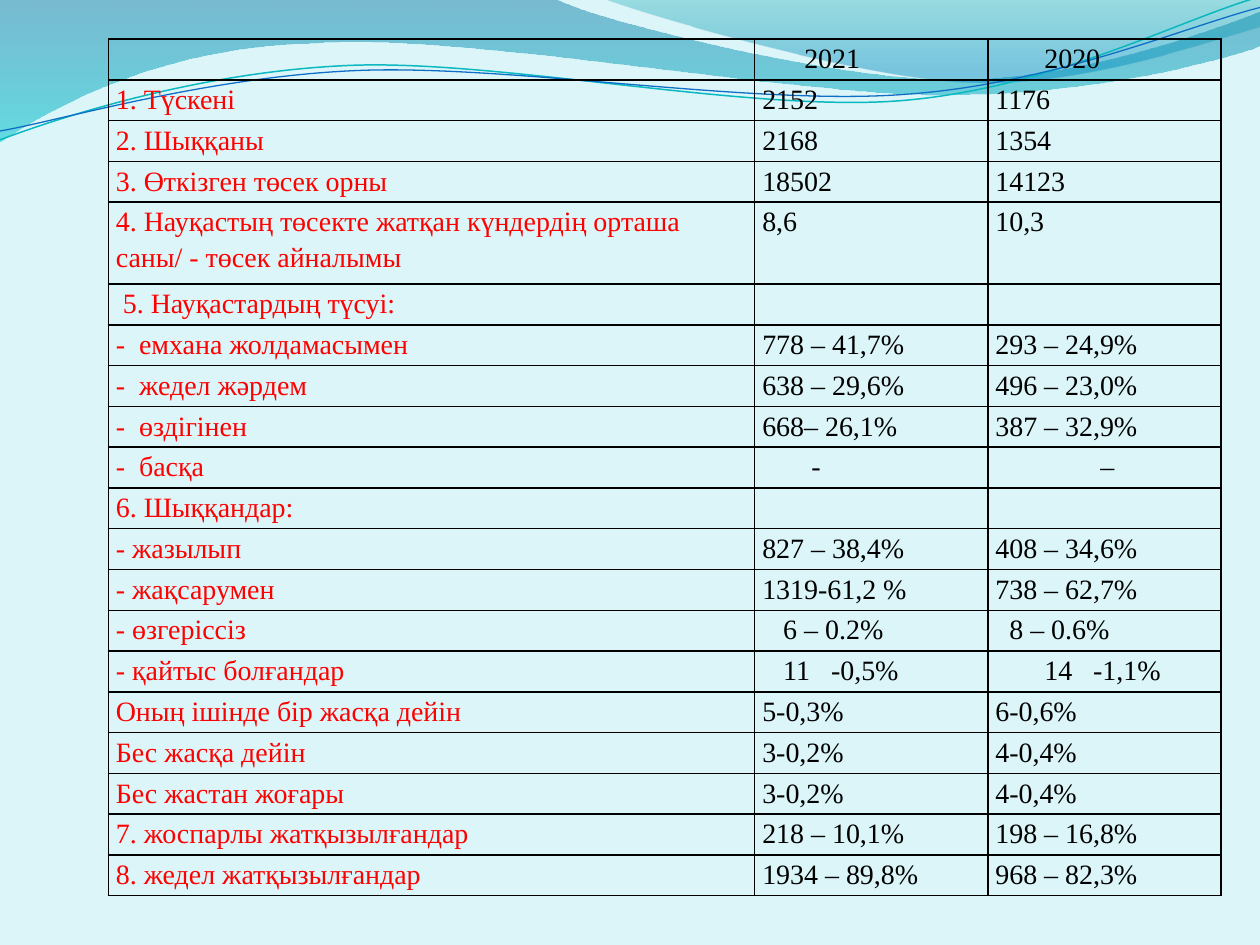
import math

import pptx
import pptx.dml.color
import pptx.enum.text
import pptx.oxml
import pptx.util
from pptx.oxml.ns import nsdecls, qn

inch = pptx.util.Inches
rgb = pptx.dml.color.RGBColor.from_string

THEME = dict(font="Times New Roman", size=16, background="DBF5F9",
             label="FF0000", value="000000", border="000000")

deck = pptx.Presentation()
deck.slide_width, deck.slide_height = inch(10), inch(7.5)
page = deck.slides.add_slide(deck.slide_layouts[6])
page.background.fill.solid()
page.background.fill.fore_color.rgb = rgb(THEME["background"])


def add_curve(start, segments, close):
    """Draw a smooth outline in inches; two numbers are a line, six a cubic Bézier."""
    units = 1000
    points = [(x * units, y * units) for segment in [start, *segments]
              for x, y in zip(segment[::2], segment[1::2])]
    builder = page.shapes.build_freeform(*points[0], scale=inch(1) / units)
    builder.add_line_segments(points[1:], close=close)
    curve = builder.convert_to_shape()
    curve.shadow.inherit = False
    lines = iter(list(curve._element.iter(qn("a:lnTo"))))
    for segment in segments:
        corners = [next(lines) for _ in segment[::2]]
        if len(corners) == 3:
            bend = pptx.oxml.parse_xml(f'<a:cubicBezTo {nsdecls("a")}/>')
            corners[0].addprevious(bend)
            for corner in corners:
                bend.append(corner[0])
                corner.getparent().remove(corner)
    return curve


# Waves: start, segments, gradient stops as (position, colour, opacity in %)
waves = [
    ((0, 0),
     [(4.4, -0.01), (4.76, 0.17, 6.64, 0.63, 7.58, 0.63),
      (8.53, 0.63, 9.58, 0.26, 10, 0.09), (10.01, 0.36),
      (9.83, 0.44, 8.7, 0.76, 7.46, 0.75), (6.22, 0.75, 3.82, 0.28, 2.57, 0.34),
      (1.29, 0.36, 0.46, 0.83, -0.01, 1.13), (0, 0)],
     [(0, "0074A1", 45), (1, "00C6CF", 55)]),
    ((4.79, -0.01),
     [(5.09, 0.11, 6.82, 0.62, 7.69, 0.65), (8.56, 0.69, 9.61, 0.32, 10, 0.21),
      (10, 0), (4.79, -0.01)],
     [(0, "00A1A9", 30), (0.8, "008BBF", 45)]),
]
for start, segments, stops in waves:
    wave = add_curve(start, segments, close=True)
    wave.line.fill.background()
    wave.fill.gradient()
    wave.fill.gradient_angle = 270
    for stop, (position, colour, _) in zip(wave.fill.gradient_stops, stops):
        stop.position = position
        stop.color.rgb = rgb(colour)
    for tint, (_, _, opacity) in zip(wave._element.spPr.iter(qn("a:srgbClr")), stops):
        tint.append(pptx.oxml.parse_xml(
            f'<a:alpha {nsdecls("a")} val="{opacity * 1000}"/>'))

# Strands: centre, segments (the first is the start), colour, width in points
strands = [
    ((4.99, 0.58),
     [(0, 1.11), (0.48, 0.93, 1.58, 0.57, 2.77, 0.52),
      (3.95, 0.47, 5.93, 0.89, 7.13, 0.8), (8.33, 0.71, 9.38, 0.15, 9.98, -0.02)],
     "0AB8BF", 0.85),
    ((5, 0.59),
     [(0, 1.04), (0.47, 0.96, 1.64, 0.61, 2.83, 0.56),
      (4.03, 0.51, 5.97, 0.84, 7.17, 0.75), (8.36, 0.67, 9.41, 0.21, 10, 0.06)],
     "0F6FC6", 0.75),
]
tilt = 2.7
cosine, sine = math.cos(math.radians(tilt)), math.sin(math.radians(tilt))
for (cx, cy), segments, colour, width in strands:
    # Level the strand about its centre, then let the shape's rotation tilt it.
    level = [[value for x, y in zip(segment[::2], segment[1::2])
              for value in (cx + (x - cx) * cosine - (y - cy) * sine,
                            cy + (x - cx) * sine + (y - cy) * cosine)]
             for segment in segments]
    strand = add_curve(level[0], level[1:], close=False)
    strand.rotation = 360 - tilt
    strand.fill.background()
    strand.line.color.rgb = rgb(colour)
    strand.line.width = pptx.util.Pt(width)

records = [
    ("", "2021", "2020"),
    ("1. Түскені", "2152", "1176"),
    ("2. Шыққаны", "2168", "1354"),
    ("3. Өткізген төсек орны", "18502", "14123"),
    ("4. Науқастың төсекте жатқан күндердің орташа саны/ - төсек айналымы",
     "8,6", "10,3"),
    ("5. Науқастардың түсуі:", "", ""),
    ("-  емхана жолдамасымен", "778 – 41,7%", "293 – 24,9%"),
    ("-  жедел жәрдем", "638 – 29,6%", "496 – 23,0%"),
    ("-  өздігінен", "668– 26,1%", "387 – 32,9%"),
    ("-  басқа", "-", "–"),
    ("6. Шыққандар:", "", ""),
    ("- жазылып", "827 – 38,4%", "408 – 34,6%"),
    ("- жақсарумен", "1319-61,2 %", "738 – 62,7%"),
    ("- өзгеріссіз", "6 – 0.2%", "8 – 0.6%"),
    ("- қайтыс болғандар", "11   -0,5%", "14   -1,1%"),
    ("Оның ішінде бір жасқа дейін", "5-0,3%", "6-0,6%"),
    ("Бес жасқа дейін", "3-0,2%", "4-0,4%"),
    ("Бес жастан жоғары", "3-0,2%", "4-0,4%"),
    ("7. жоспарлы жатқызылғандар", "218 – 10,1%", "198 – 16,8%"),
    ("8. жедел жатқызылғандар", "1934 – 89,8%", "968 – 82,3%"),
]
# Extra left indent in points, by (row, column)
indents = {(0, 1): 24, (0, 2): 28, (5, 0): 4, (9, 1): 28, (9, 2): 60,
           (13, 1): 12, (13, 2): 8, (14, 1): 12, (14, 2): 28}

table_height, tall_row, tall_height = 6.8, 4, 0.65
row_height = (table_height - tall_height) / (len(records) - 1)
table = page.shapes.add_table(len(records), 3, inch(0.86), inch(0.31),
                              inch(8.83), inch(table_height)).table
table.first_row = table.horz_banding = False
for column, width in zip(table.columns, (5.13, 1.85, 1.85)):
    column.width = inch(width)

for row, record in enumerate(records):
    table.rows[row].height = inch(tall_height if row == tall_row else row_height)
    for column, text in enumerate(record):
        cell = table.cell(row, column)
        cell.margin_left = inch(0.06) + pptx.util.Pt(indents.get((row, column), 0))
        cell.margin_right = inch(0.06)
        cell.margin_top = cell.margin_bottom = 0
        cell.text = text
        para = cell.text_frame.paragraphs[0]
        para.alignment = pptx.enum.text.PP_ALIGN.LEFT
        para.line_spacing = 1.15
        para.font.name = THEME["font"]
        para.font.size = pptx.util.Pt(THEME["size"])
        para.font.color.rgb = rgb(THEME["value" if column else "label"])
        properties = cell._tc.get_or_add_tcPr()
        for side in ("lnL", "lnR", "lnT", "lnB"):
            properties.append(pptx.oxml.parse_xml(
                f'<a:{side} {nsdecls("a")} w="12700"><a:solidFill>'
                f'<a:srgbClr val="{THEME["border"]}"/></a:solidFill></a:{side}>'))
        cell.fill.background()

deck.save("out.pptx")
